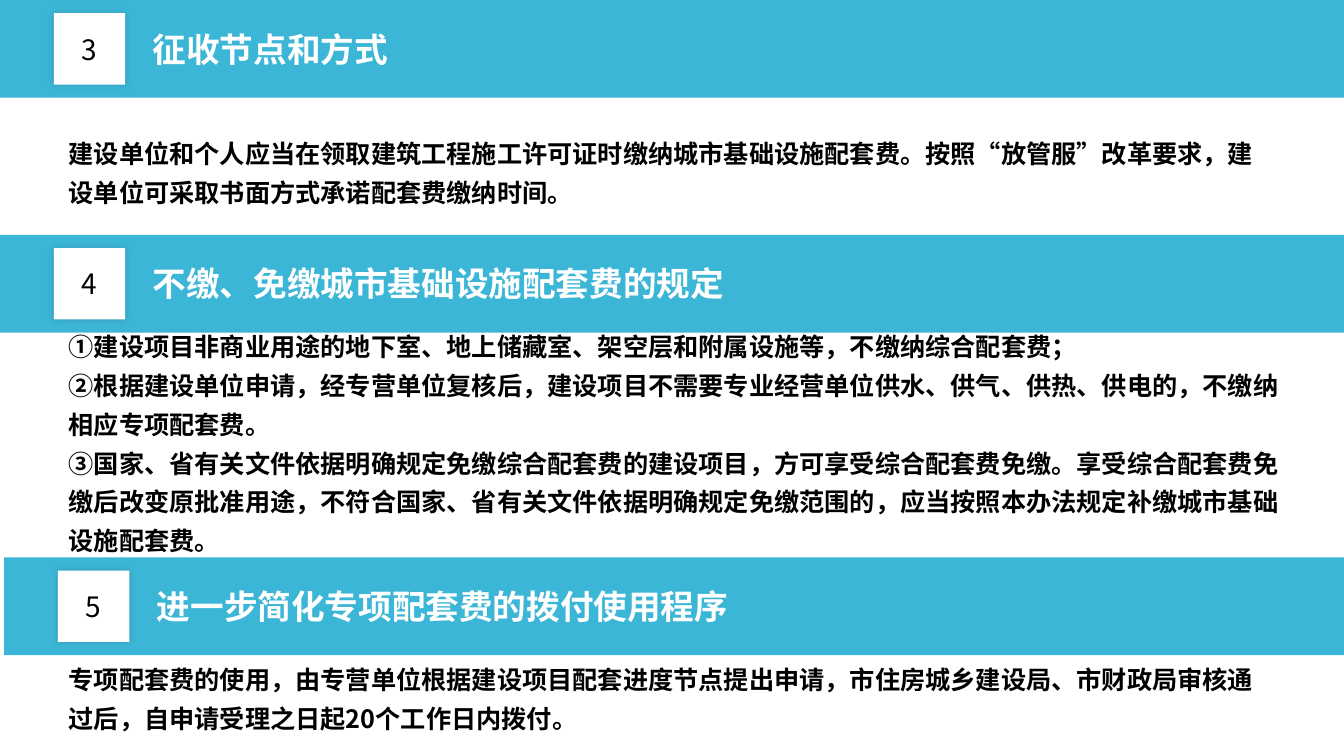
from pptx import Presentation
from pptx.dml.color import RGBColor
from pptx.enum.shapes import MSO_SHAPE as Preset
from pptx.enum.text import MSO_ANCHOR as Anchor, MSO_AUTO_SIZE as AutoSize, PP_ALIGN as Align
from pptx.oxml import parse_xml
from pptx.oxml.ns import nsdecls
from pptx.util import Inches, Pt

FONT = "Noto Sans CJK SC"
BLUE, WHITE, BLACK = "3CB6D6", "FFFFFF", "000000"

# The slide is a grid of 160 columns by 90 rows with square cells
COLUMNS, ROWS = 160, 90
CELL = Inches(7.5) / ROWS
BAND_ROWS, BADGE_SIZE = 11.64, 8.5
BODY_LEFT = 7

# Each section: number, title, title columns, band left, band top,
# body top, body columns, body rows, body line spacing, paragraphs
SECTIONS = [
    ("3", "征收节点和方式", 35.6, 0, 0, 14.76, 146, 10, 1.3, [
        "建设单位和个人应当在领取建筑工程施工许可证时缴纳城市基础设施配套费。"
        "按照“放管服”改革要求，建设单位可采取书面方式承诺配套费缴纳时间。",
    ]),
    # Slightly tighter lines keep this body between its two bands
    ("4", "不缴、免缴城市基础设施配套费的规定", 85.7, 0, 27.96, 37.9, 146.9, 28.4, 1.28, [
        "①建设项目非商业用途的地下室、地上储藏室、架空层和附属设施等，不缴纳综合配套费；",
        "②根据建设单位申请，经专营单位复核后，建设项目不需要专业经营单位供水、供气、供热、"
        "供电的，不缴纳相应专项配套费。",
        "③国家、省有关文件依据明确规定免缴综合配套费的建设项目，方可享受综合配套费免缴。"
        "享受综合配套费免缴后改变原批准用途，不符合国家、省有关文件依据明确规定免缴范围的，"
        "应当按照本办法规定补缴城市基础设施配套费。",
    ]),
    ("5", "进一步简化专项配套费的拨付使用程序", 95.3, 0.5, 66.36, 77.36, 146, 10, 1.3, [
        "专项配套费的使用，由专营单位根据建设项目配套进度节点提出申请，"
        "市住房城乡建设局、市财政局审核通过后，自申请受理之日起20个工作日内拨付。",
    ]),
]


def color(value):
    return RGBColor.from_string(value)


def cells(*lengths):
    return [round(length * CELL) for length in lengths]


def write(frame, paragraphs, size, ink, bold=False, align=Align.LEFT, spacing=None):
    """Fill a text frame with one paragraph per string."""
    for index, text in enumerate(paragraphs):
        para = frame.paragraphs[0] if index == 0 else frame.add_paragraph()
        para.alignment = align
        para.line_spacing = spacing
        span = para.add_run()
        span.text = text
        span.font.size, span.font.bold = Pt(size), bold
        span.font.name = FONT
        span.font.color.rgb = color(ink)
        properties = span.font._element
        properties.set("lang", "zh-CN")
        properties.append(parse_xml(f'<a:ea {nsdecls("a")} typeface="{FONT}"/>'))


def add_box(shapes, left, top, width, height, fill):
    box = shapes.add_shape(Preset.RECTANGLE, *cells(left, top, width, height))
    box.shadow.inherit = False
    box.fill.solid()
    box.fill.fore_color.rgb = color(fill)
    box.line.fill.background()
    return box


def add_text(shapes, left, top, width, height, paragraphs, **style):
    box = shapes.add_textbox(*cells(left, top, width, height))
    frame = box.text_frame
    frame.word_wrap = True
    frame.auto_size = AutoSize.SHAPE_TO_FIT_TEXT
    write(frame, paragraphs, **style)


def add_glow_shadow(box):
    """Give a box a faint soft shadow on all sides."""
    effects = box._element.spPr.find("{*}effectLst")
    effects.append(parse_xml(
        f'<a:outerShdw {nsdecls("a")} blurRad="{Pt(5)}" dist="0" dir="0" algn="ctr" '
        f'rotWithShape="0"><a:srgbClr val="{BLACK}"><a:alpha val="14000"/></a:srgbClr>'
        '</a:outerShdw>'))


def add_heading(page, number, title, title_width, left, top):
    """Group a full-width band with its number badge and title."""
    shapes = page.shapes.add_group_shape().shapes
    add_box(shapes, left, top, COLUMNS - left, BAND_ROWS, BLUE)
    badge_top = top + (BAND_ROWS - BADGE_SIZE) / 2
    badge = add_box(shapes, left + 6.4, badge_top, BADGE_SIZE, BADGE_SIZE, WHITE)
    add_glow_shadow(badge)
    badge.text_frame.vertical_anchor = Anchor.MIDDLE
    write(badge.text_frame, [number], size=20, ink=BLACK, align=Align.CENTER)
    add_text(shapes, left + 17, top + 2.8, title_width, 6, [title],
             size=24, ink=WHITE, bold=True)


def main():
    deck = Presentation()
    deck.slide_width, deck.slide_height = cells(COLUMNS, ROWS)
    page = deck.slides.add_slide(deck.slide_layouts[6])

    # Sections from top to bottom
    for number, title, title_width, left, top, body_top, width, height, spacing, body in SECTIONS:
        add_heading(page, number, title, title_width, left, top)
        add_text(page.shapes, BODY_LEFT, body_top, width, height, body,
                 size=18, ink=BLACK, bold=True, spacing=spacing)

    deck.save("out.pptx")


if __name__ == "__main__":
    main()
